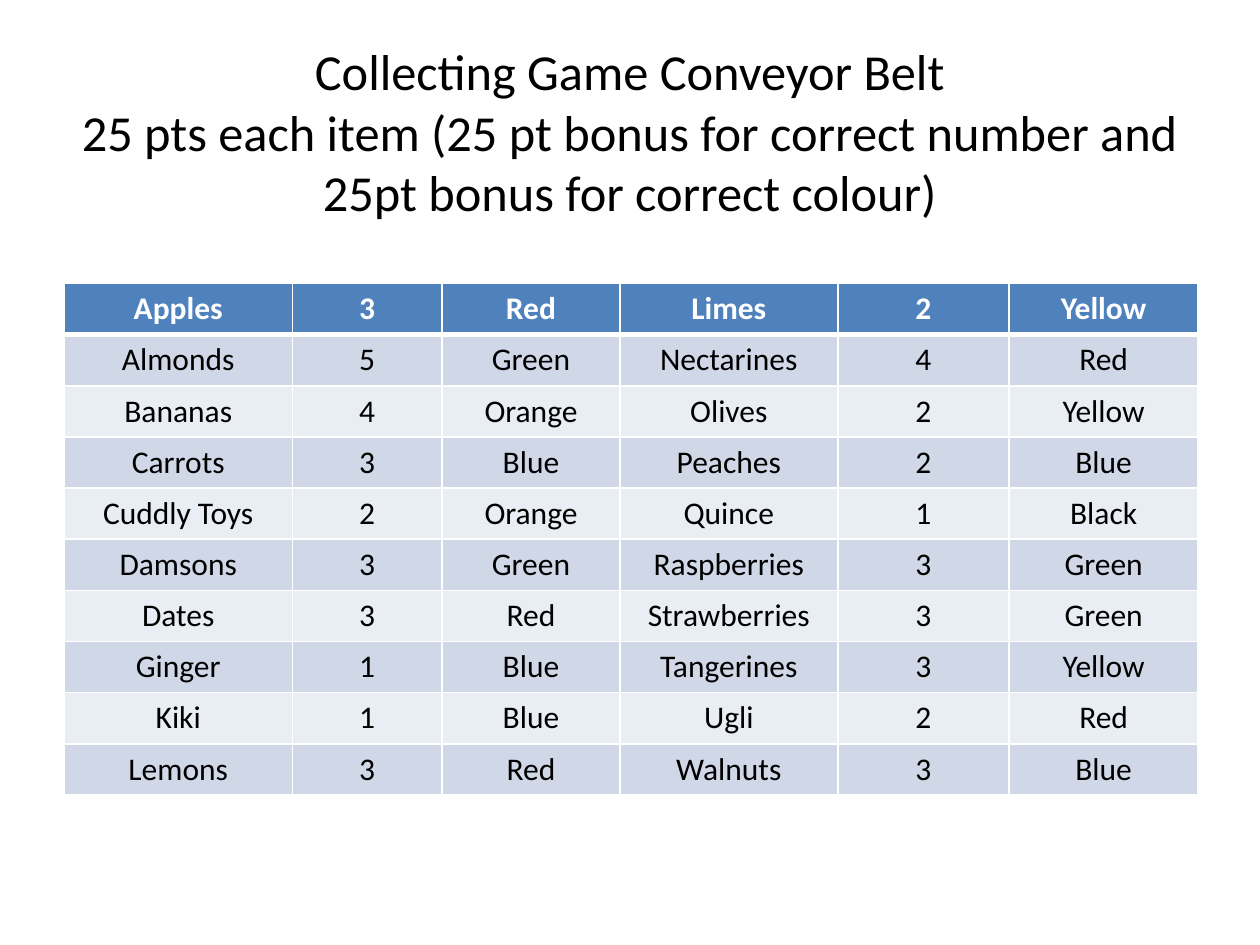
import copy
import lxml.etree
import pptx
import pptx.dml.color
import pptx.enum.text
import pptx.oxml.ns
import pptx.util

Inches = pptx.util.Inches
HUES = {"ink": "000000", "white": "FFFFFF", "head": "4F81BD", "odd": "D0D8E8", "even": "E9EDF4"}
TITLE = """Collecting Game Conveyor Belt
25 pts each item (25 pt bonus for correct number and 25pt bonus for correct colour)"""
WIDTHS = [1.81, 1.19, 1.41, 1.73, 1.36, 1.5]
ITEMS = [
    ("Apples", 3, "Red", "Limes", 2, "Yellow"),
    ("Almonds", 5, "Green", "Nectarines", 4, "Red"),
    ("Bananas", 4, "Orange", "Olives", 2, "Yellow"),
    ("Carrots", 3, "Blue", "Peaches", 2, "Blue"),
    ("Cuddly Toys", 2, "Orange", "Quince", 1, "Black"),
    ("Damsons", 3, "Green", "Raspberries", 3, "Green"),
    ("Dates", 3, "Red", "Strawberries", 3, "Green"),
    ("Ginger", 1, "Blue", "Tangerines", 3, "Yellow"),
    ("Kiki", 1, "Blue", "Ugli", 2, "Red"),
    ("Lemons", 3, "Red", "Walnuts", 3, "Blue"),
]


def tint(name):
    """Return the named colour."""
    return pptx.dml.color.RGBColor.from_string(HUES[name])


def edge(cell, side, width, hue="white"):
    """Draw one border of a cell that has no fill yet."""
    qn = pptx.oxml.ns.qn
    line = lxml.etree.SubElement(
        cell._tc.get_or_add_tcPr(), qn("a:" + side), w=str(pptx.util.Pt(width)))
    fill = lxml.etree.SubElement(line, qn("a:solidFill"))
    lxml.etree.SubElement(fill, qn("a:srgbClr"), val=HUES[hue])


def write(frame, text, size=18, hue="ink", bold=False, font="Calibri"):
    """Fill a text frame with one centred paragraph."""
    para = frame.paragraphs[0]
    para.text = text
    para.alignment = pptx.enum.text.PP_ALIGN.CENTER
    for run in para.runs:
        run.font.name = font
        run.font.size = pptx.util.Pt(size)
        run.font.bold = bold
        run.font.color.rgb = tint(hue)
    for gap in para._p.findall(pptx.oxml.ns.qn("a:br")):
        gap.append(copy.deepcopy(para.runs[0]._r.rPr))


class Page:
    """Hold the current slide and add styled elements to it."""

    def __init__(self, deck):
        """Add a title-only slide."""
        self.slide = deck.slides.add_slide(deck.slide_layouts[5])

    def title(self, text, left, top, width, height):
        """Place and fill the title."""
        shape = self.slide.shapes.title
        shape.left, shape.top = Inches(left), Inches(top)
        shape.width, shape.height = Inches(width), Inches(height)
        frame = shape.text_frame
        frame.auto_size = pptx.enum.text.MSO_AUTO_SIZE.NONE
        frame.vertical_anchor = pptx.enum.text.MSO_ANCHOR.MIDDLE
        frame.word_wrap = True
        write(frame, text, size=28.8)

    def table(self, rows, widths, left, top, height):
        """Add a table with a header row and banded rows."""
        grid = self.slide.shapes.add_table(
            len(rows), len(widths), Inches(left), Inches(top),
            Inches(sum(widths)), Inches(height)).table
        for col, width in zip(grid.columns, widths):
            col.width = Inches(width)
        for i, row in enumerate(rows):
            head = i == 0
            band = "head" if head else "odd" if i % 2 else "even"
            for j, value in enumerate(row):
                cell = grid.cell(i, j)
                for side in ("lnL", "lnR", "lnT", "lnB"):
                    thick = (head and side == "lnB") or (i == 1 and side == "lnT")
                    edge(cell, side, 3 if thick else 1)
                cell.fill.solid()
                cell.fill.fore_color.rgb = tint(band)
                write(cell.text_frame, str(value), hue="white" if head else "ink", bold=head)


def main():
    """Build and save the slide."""
    deck = pptx.Presentation()
    deck.slide_width, deck.slide_height = Inches(10), Inches(7.5)
    page = Page(deck)
    page.title(TITLE, 0.5, 0.3, 9, 1.48)
    page.table(ITEMS, WIDTHS, 0.51, 2.25, 4.06)
    deck.save("out.pptx")


if __name__ == "__main__":
    main()
